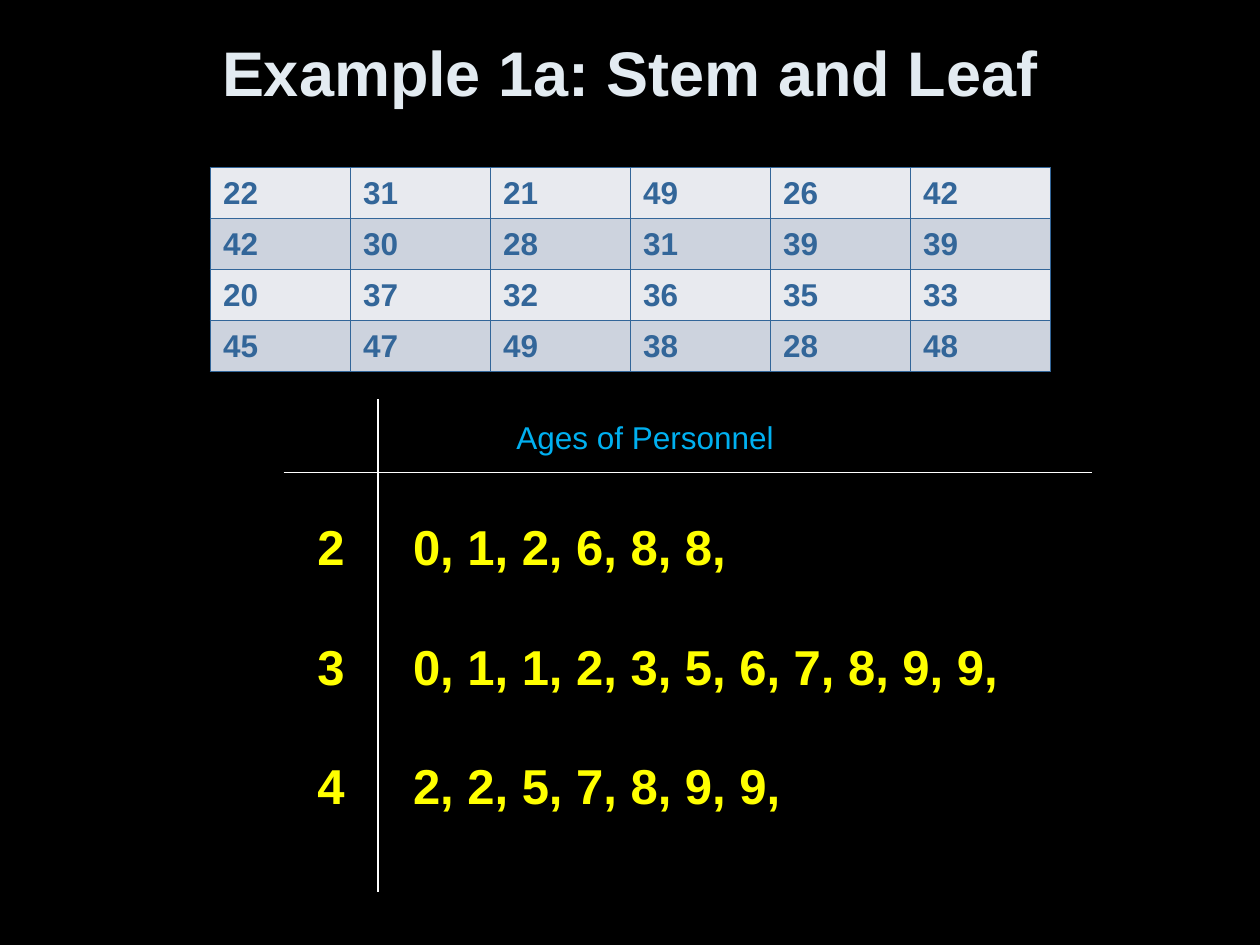
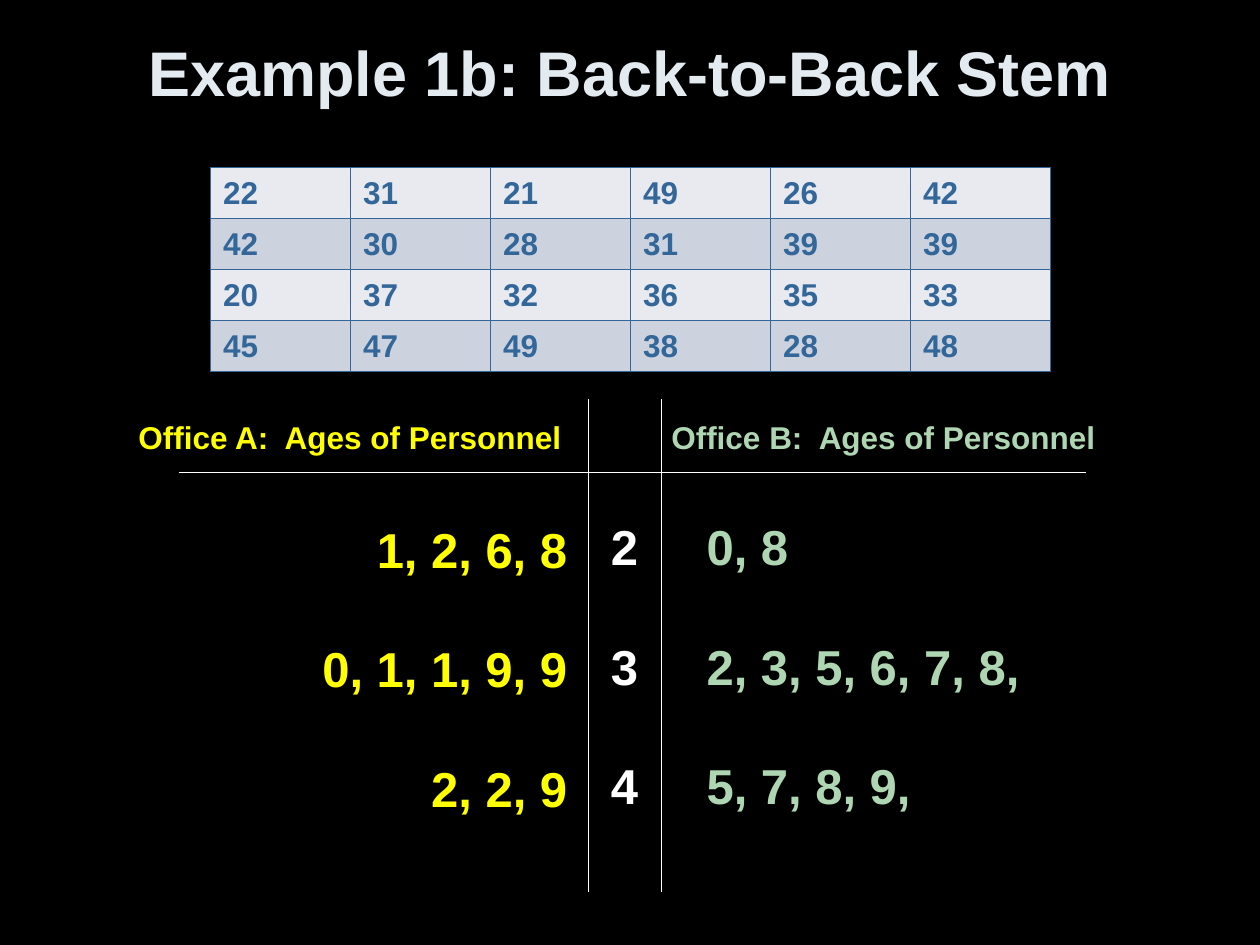
from dataclasses import dataclass

from lxml import etree
from pptx import Presentation
from pptx.dml.color import RGBColor
from pptx.enum.shapes import MSO_CONNECTOR
from pptx.enum.text import MSO_ANCHOR, PP_ALIGN
from pptx.oxml.ns import qn
from pptx.util import Inches, Pt

LEFT, CENTER, RIGHT = PP_ALIGN.LEFT, PP_ALIGN.CENTER, PP_ALIGN.RIGHT
TOP, MIDDLE = MSO_ANCHOR.TOP, MSO_ANCHOR.MIDDLE
STRAIGHT = MSO_CONNECTOR.STRAIGHT

AGES = [
    [22, 31, 21, 49, 26, 42],
    [42, 30, 28, 31, 39, 39],
    [20, 37, 32, 36, 35, 33],
    [45, 47, 49, 38, 28, 48],
]
STEMS = [2, 3, 4]


@dataclass(frozen=True)
class Theme:
    font: str = "Arial"
    background: str = "000000"
    title: str = "E3EBF1"
    line: str = "FFFFFF"
    stem: str = "FFFFFF"
    heading: str = "00B0F0"
    office_a: str = "FFFF00"
    office_b: str = "AFD6B2"
    grid: str = "336699"
    bands: tuple = ("E8EAEF", "CDD3DE")
    title_size: int = 36
    leaf_size: int = 28
    small_size: int = 18
    leaf_gap: float = 34.8
    leaf_tab: float = 0.76


class Deck:
    def __init__(self, theme):
        self.theme = theme
        self.prs = Presentation()
        self.prs.slide_width, self.prs.slide_height = Inches(10), Inches(7.5)
        self.s = None

    def slide(self, title):
        t = self.theme
        self.s = self.prs.slides.add_slide(self.prs.slide_layouts[6])
        fill = self.s.background.fill
        fill.solid()
        fill.fore_color.rgb = RGBColor.from_string(t.background)
        self.text((0.5, 0.1, 9, 0.83), [[(title, t.title)]], t.title_size,
                  inset=0.15, align=CENTER, anchor=MIDDLE)

    def style(self, font, size, color, bold=True):
        formats = {"name": self.theme.font, "size": Pt(size), "bold": bold}
        for name, value in formats.items():
            setattr(font, name, value)
        font.color.rgb = RGBColor.from_string(color)

    def text(self, box, paragraphs, size, inset, align=LEFT, anchor=TOP,
             bold=True, gap=0, tab=None):
        tf = self.s.shapes.add_textbox(*map(Inches, box)).text_frame
        formats = {"word_wrap": True, "vertical_anchor": anchor,
                   "margin_top": Inches(inset)}
        for name, value in formats.items():
            setattr(tf, name, value)
        for i, runs in enumerate(paragraphs):
            p = tf.add_paragraph() if i else tf.paragraphs[0]
            p.alignment = align
            p.space_before = Pt(gap if i else 0)
            if tab:
                tabs = etree.SubElement(p._p.get_or_add_pPr(), qn("a:tabLst"))
                etree.SubElement(tabs, qn("a:tab"),
                                 pos=str(Inches(tab)), algn="l")
            for words, color in runs:
                r = p.add_run()
                r.text = words
                self.style(r.font, size, color, bold)

    def heading(self, left, width, words, color, bold=True):
        self.text((left, 3.25, width, 0.4), [[(words, color)]],
                  self.theme.small_size, inset=0.07, bold=bold)

    def leaves(self, box, rows, align=LEFT, tab=None):
        self.text(box, rows, self.theme.leaf_size, inset=0.1, align=align,
                  gap=self.theme.leaf_gap, tab=tab)

    def stem_plot(self, left, width, stem_color, leaf_color, leaves):
        rows = [[(f"{stem}\t", stem_color), (leaf, leaf_color)]
                for stem, leaf in zip(STEMS, leaves)]
        self.leaves((left, 4, width, 2.46), rows, tab=self.theme.leaf_tab)

    def line(self, x1, y1, x2, y2):
        c = self.s.shapes.add_connector(STRAIGHT, *map(Inches, (x1, y1, x2, y2)))
        c.line.color.rgb = RGBColor.from_string(self.theme.line)
        c.line.width = Pt(0.75)
        etree.SubElement(c._element.spPr, qn("a:effectLst"))

    def axes(self, left, right, *uprights):
        self.line(left, 3.75, right, 3.75)
        for x in uprights:
            self.line(x, 3.17, x, 7.08)

    def border(self, cell):
        tc_pr = cell._tc.get_or_add_tcPr()
        for i, side in enumerate(("lnL", "lnR", "lnT", "lnB")):
            ln = etree.Element(qn(f"a:{side}"), w=str(Pt(1)))
            fill = etree.SubElement(ln, qn("a:solidFill"))
            etree.SubElement(fill, qn("a:srgbClr"), val=self.theme.grid)
            tc_pr.insert(i, ln)

    def table(self, values):
        t = self.theme
        box = map(Inches, (1.67, 1.33, 6.67, 1.62))
        table = self.s.shapes.add_table(len(values), len(values[0]), *box).table
        table.first_row = table.horz_banding = False
        for i, row in enumerate(values):
            for j, value in enumerate(row):
                cell = table.cell(i, j)
                cell.text = str(value)
                cell.vertical_anchor = MIDDLE
                cell.fill.solid()
                cell.fill.fore_color.rgb = RGBColor.from_string(t.bands[i % 2])
                self.border(cell)
                r = cell.text_frame.paragraphs[0].runs[0]
                self.style(r.font, t.small_size, t.grid)


def single_stem(deck):
    t = deck.theme
    deck.slide("Example 1a: Stem and Leaf")
    deck.axes(2.25, 8.67, 3)
    deck.stem_plot(2.42, 5.66, t.office_a, t.office_a, [
        "0, 1, 2, 6, 8, 8,",
        "0, 1, 1, 2, 3, 5, 6, 7, 8, 9, 9,",
        "2, 2, 5, 7, 8, 9, 9,",
    ])
    deck.table(AGES)
    deck.heading(4, 2.26, "Ages of Personnel", t.heading, bold=False)


def back_to_back_stem(deck):
    t = deck.theme
    deck.slide("Example 1b: Back-to-Back Stem")
    deck.axes(1.42, 8.62, 4.67, 5.25)
    deck.stem_plot(4.75, 3.58, t.stem, t.office_b,
                   ["0, 8", "2, 3, 5, 6, 7, 8,", "5, 7, 8, 9,"])
    deck.table(AGES)
    deck.heading(5.23, 3.6, "Office B:  Ages of Personnel", t.office_b)
    deck.heading(1, 3.59, "Office A:  Ages of Personnel", t.office_a)
    office_a = ["1, 2, 6, 8", "0, 1, 1, 9, 9", "2, 2, 9"]
    deck.leaves((2.43, 4.02, 2.17, 2.46),
                [[(leaf, t.office_a)] for leaf in office_a], align=RIGHT)


def main():
    deck = Deck(Theme())
    single_stem(deck)
    back_to_back_stem(deck)
    deck.prs.save("out.pptx")


if __name__ == "__main__":
    main()
